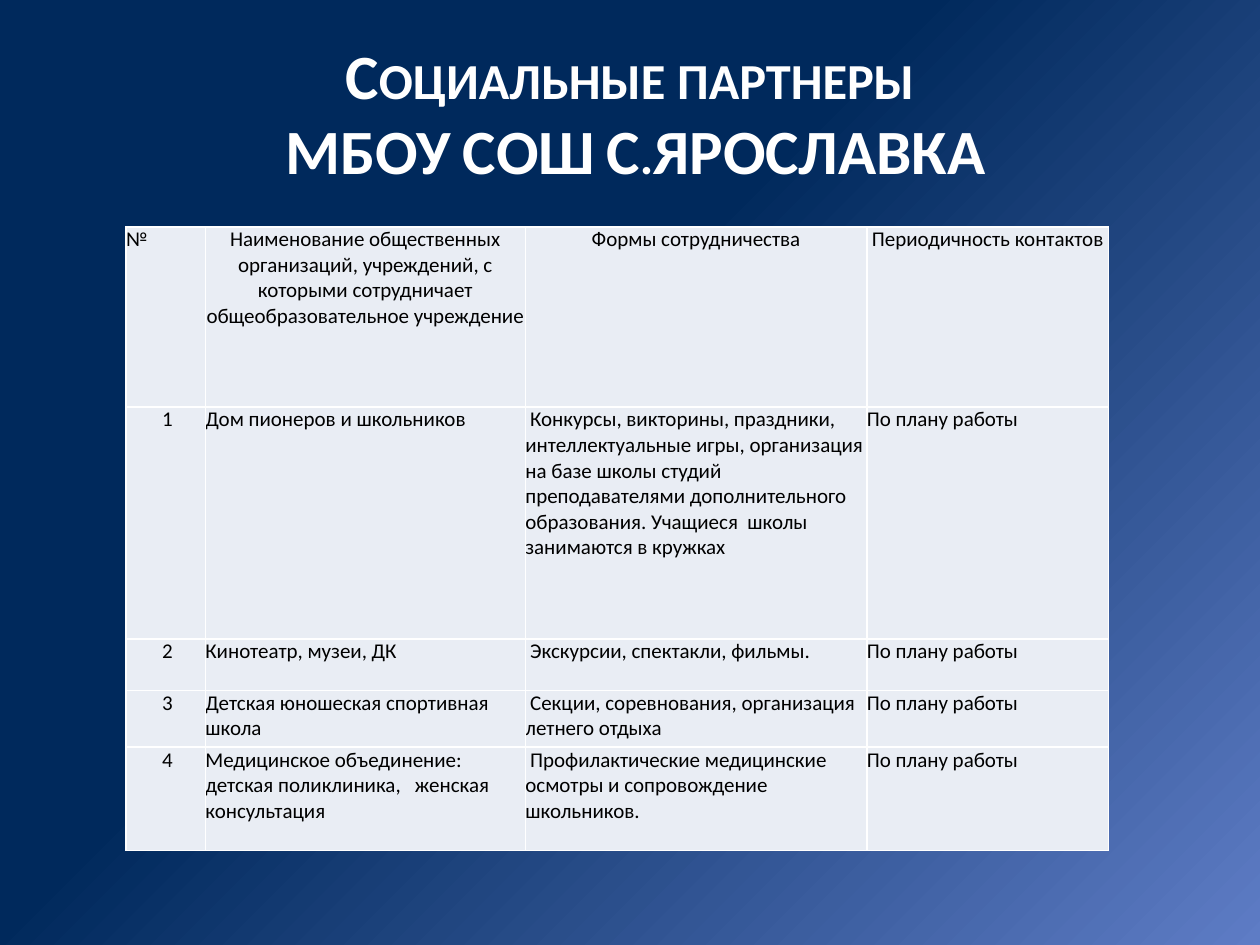
from dataclasses import dataclass

from lxml.etree import SubElement
from pptx import Presentation
from pptx.dml.color import RGBColor
from pptx.enum.text import MSO_ANCHOR, MSO_AUTO_SIZE, PP_ALIGN
from pptx.oxml import parse_xml
from pptx.oxml.ns import nsdecls, qn
from pptx.util import Inches, Pt


@dataclass(frozen=True)
class Theme:
    font: str = "Calibri"
    title_size: int = 36
    table_size: int = 12
    border_width: int = 1
    glow: str = "5E7CC5"
    night: str = "00295C"
    white: str = "FFFFFF"
    ink: str = "000000"
    cell: str = "E9EDF4"


HEADINGS = [
    "№",
    "Наименование общественных организаций, учреждений, с которыми сотрудничает общеобразовательное учреждение",
    "Формы сотрудничества",
    "Периодичность контактов",
]
SCHEDULE = "По плану работы"
PARTNERS = [
    ("Дом пионеров и школьников",
     " Конкурсы, викторины, праздники, интеллектуальные игры, организация на базе школы студий "
     "преподавателями дополнительного образования. Учащиеся  школы занимаются в кружках"),
    ("Кинотеатр, музеи, ДК", " Экскурсии, спектакли, фильмы."),
    ("Детская юношеская спортивная школа", " Секции, соревнования, организация летнего отдыха"),
    ("Медицинское объединение: детская поликлиника,   женская консультация",
     " Профилактические медицинские осмотры и сопровождение школьников."),
]
COLUMN_WIDTHS = [0.63, 2.54, 2.71, 1.92]
ROW_HEIGHTS = [1.43, 1.84, 0.41, 0.45, 0.82]


class SlideBuilder:
    def __init__(self, deck, theme):
        self.deck = deck
        self.theme = theme
        self.slide = deck.slides.add_slide(deck.slide_layouts[5])

    def across(self, share):
        return round(self.deck.slide_width * share)

    def down(self, share):
        return round(self.deck.slide_height * share)

    def format_runs(self, paragraph, size, color, bold=False):
        for run in paragraph.runs:
            run.font.name = self.theme.font
            run.font.size = Pt(size)
            run.font.bold = bold
            run.font.color.rgb = RGBColor.from_string(color)

    def background(self):
        fill = self.slide.background.fill
        fill.gradient()
        stops = [(0, self.theme.glow), (0.58, self.theme.night)]
        for stop, (position, color) in zip(fill.gradient_stops, stops):
            stop.position = position
            stop.color.rgb = RGBColor.from_string(color)
        gradient = self.slide.element.find(".//" + qn("a:gradFill"))
        gradient.remove(gradient.find(qn("a:lin")))
        radial = SubElement(gradient, qn("a:path"), {"path": "circle"})
        SubElement(radial, qn("a:fillToRect"), {"l": "100000", "t": "100000"})

    def title(self, wording, left, top, width, height):
        heading = self.slide.shapes.title
        heading.left, heading.top = self.across(left), self.down(top)
        heading.width, heading.height = self.across(width), self.down(height)
        frame = heading.text_frame
        frame.text = wording
        frame.auto_size = MSO_AUTO_SIZE.NONE
        frame.vertical_anchor = MSO_ANCHOR.MIDDLE
        frame.margin_bottom = self.down(0.08)
        paragraph = frame.paragraphs[0]
        paragraph.alignment = PP_ALIGN.CENTER
        self.format_runs(paragraph, self.theme.title_size, self.theme.white, bold=True)
        for run in paragraph.runs:
            run.font._element.set("cap", "small")

    def border(self, cell):
        properties = cell._tc.get_or_add_tcPr()
        for index, side in enumerate(("lnL", "lnR", "lnT", "lnB")):
            properties.insert(index, parse_xml(
                f'<a:{side} {nsdecls("a")} w="{Pt(self.theme.border_width)}"><a:solidFill>'
                f'<a:srgbClr val="{self.theme.white}"/></a:solidFill></a:{side}>'))

    def cell(self, cell, wording, centred, indent):
        cell.text_frame.text = wording
        cell.margin_left = cell.margin_right = cell.margin_top = cell.margin_bottom = 0
        cell.fill.solid()
        cell.fill.fore_color.rgb = RGBColor.from_string(self.theme.cell)
        paragraph = cell.text_frame.paragraphs[0]
        paragraph.alignment = PP_ALIGN.CENTER if centred else PP_ALIGN.LEFT
        if indent:
            paragraph._p.get_or_add_pPr().set("marL", str(Inches(indent)))
        self.format_runs(paragraph, self.theme.table_size, self.theme.ink)
        self.border(cell)

    def table(self, rows, left, top, widths, heights):
        grid = self.slide.shapes.add_table(
            len(heights), len(widths), self.across(left), self.down(top),
            Inches(sum(widths)), Inches(sum(heights))).table
        for column, width in zip(grid.columns, widths):
            column.width = Inches(width)
        for row, height in zip(grid.rows, heights):
            row.height = Inches(height)
        for r, entries in enumerate(rows):
            for c, wording in enumerate(entries):
                self.cell(grid.cell(r, c), wording, centred=r == 0 and c > 0,
                          indent=0.25 if r > 0 and c == 0 else 0)


def main():
    deck = Presentation()
    deck.slide_width, deck.slide_height = Inches(10), Inches(7.5)
    builder = SlideBuilder(deck, Theme())
    builder.background()
    builder.title("Социальные партнеры\v МБОУ СОШ С.ЯРОСЛАВКА", 0.05, 0.05, 0.9, 0.21)
    rows = [HEADINGS] + [
        (f" {number}", partner, activity, SCHEDULE)
        for number, (partner, activity) in enumerate(PARTNERS, start=1)
    ]
    builder.table(rows, 0.1, 0.24, COLUMN_WIDTHS, ROW_HEIGHTS)
    deck.save("out.pptx")


if __name__ == "__main__":
    main()
